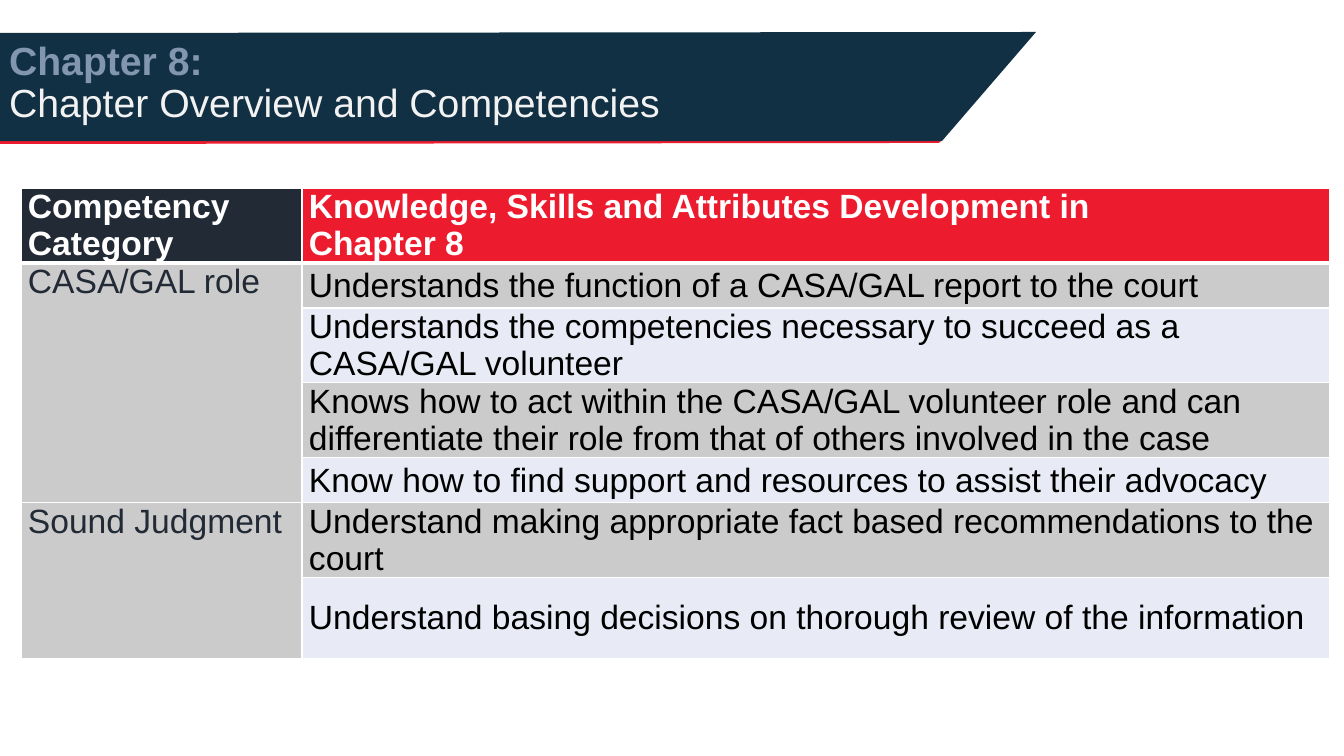
from pptx import Presentation
from pptx.dml.color import RGBColor
from pptx.enum.text import MSO_ANCHOR, PP_ALIGN
from pptx.oxml import parse_xml
from pptx.oxml.ns import nsdecls
from pptx.util import Emu, Pt

TOP, MIDDLE = MSO_ANCHOR.TOP, MSO_ANCHOR.MIDDLE
LEFT = PP_ALIGN.LEFT

COLORS = {
    "navy": "113044", "red": "ED1B2E", "slate": "8296B0", "pale": "F2F2F2",
    "ink": "222A35", "grey": "CBCBCB", "lilac": "E8EBF5",
    "white": "FFFFFF", "black": "000000",
}
TITLE_LINES = [("Chapter 8: ", "slate", True),
               ("Chapter Overview and Competencies", "pale", False)]
HEADERS = [("Competency Category", "ink"),
           ("Knowledge, Skills and Attributes Development in\nChapter 8", "red")]
COMPETENCIES = {
    "CASA/GAL role": [
        "Understands the function of a CASA/GAL report to the court",
        "Understands the competencies necessary to succeed as a CASA/GAL volunteer",
        "Knows how to act within the CASA/GAL volunteer role and can differentiate "
        "their role from that of others involved in the case",
        "Know how to find support and resources to assist their advocacy",
    ],
    "Sound Judgment": [
        "Understand making appropriate fact based recommendations to the court",
        "Understand basing decisions on thorough review of the information",
    ],
}
# Outlines and boxes in px
BANNER = [
    ("red", [(-1, 139), (943, 139), (939, 143), (-1, 144)]),
    ("navy", [(1036, 32), (0, 33), (-1, 141), (942, 141)]),
]
TITLE_BOX = {"left": -1, "top": 11, "width": 1159, "height": 146}
TABLE_BOX = (21, 188, 1309, 496)
COLUMN_WIDTHS = [281, 1028]
ROW_HEIGHTS = [36, 45, 40, 40, 45, 34, 81]
CELL_MARGINS = {"margin_left": 7, "margin_right": 7, "margin_top": 0, "margin_bottom": 0}
EMU_PER_PX = 914400 / 100.8


def px(length):
    return Emu(round(length * EMU_PER_PX))


def rgb(name):
    return RGBColor.from_string(COLORS[name])


def style_font(font, size, color, bold):
    for key, value in {"name": "Arial", "size": Pt(size), "bold": bold}.items():
        setattr(font, key, value)
    font.color.rgb = rgb(color)


def add_banner(slide):
    """Draw the banner strips behind the title."""
    tree = slide.shapes._spTree
    for layer, (color, points) in enumerate(BANNER):
        builder = slide.shapes.build_freeform(*points[0], scale=EMU_PER_PX)
        builder.add_line_segments(points[1:], close=True)
        strip = builder.convert_to_shape()
        strip.shadow.inherit = False
        strip.fill.solid()
        strip.fill.fore_color.rgb = rgb(color)
        strip.line.fill.background()
        tree.remove(strip._element)
        tree.insert(2 + layer, strip._element)


def fill_title(title):
    for side, length in TITLE_BOX.items():
        setattr(title, side, px(length))
    frame = title.text_frame
    frame.word_wrap = True
    frame.vertical_anchor = MIDDLE
    paragraph = frame.paragraphs[0]
    paragraph.alignment = LEFT
    paragraph.line_spacing = 0.9
    for index, (text, color, bold) in enumerate(TITLE_LINES):
        if index:
            paragraph.add_line_break()
        run = paragraph.add_run()
        run.text = text
        style_font(run.font, 28, color, bold)


def add_borders(cell, bottom_width):
    properties = cell._tc.get_or_add_tcPr()
    widths = {"lnL": 1, "lnR": 1, "lnT": 1, "lnB": bottom_width}
    for index, (side, width) in enumerate(widths.items()):
        properties.insert(index, parse_xml(
            f'<a:{side} {nsdecls("a")} w="{Pt(width)}"><a:solidFill>'
            f'<a:srgbClr val="{COLORS["white"]}"/></a:solidFill></a:{side}>'))


def fill_cell(cell, text, fill, color="black", bold=False, anchor=TOP, bottom_width=1):
    cell.text = text
    for side, length in CELL_MARGINS.items():
        setattr(cell, side, px(length))
    cell.vertical_anchor = anchor
    cell.fill.solid()
    cell.fill.fore_color.rgb = rgb(fill)
    for paragraph in cell.text_frame.paragraphs:
        for run in paragraph.runs:
            style_font(run.font, 24, color, bold)
    add_borders(cell, bottom_width)


def add_competency_table(slide):
    table = slide.shapes.add_table(
        len(ROW_HEIGHTS), len(COLUMN_WIDTHS), *map(px, TABLE_BOX)).table
    for column, width in zip(table.columns, COLUMN_WIDTHS):
        column.width = px(width)
    for table_row, height in zip(table.rows, ROW_HEIGHTS):
        table_row.height = px(height)
    for column, (heading, fill) in enumerate(HEADERS):
        fill_cell(table.cell(0, column), heading, fill, "white", True, bottom_width=3)
    row = 1
    for category, skills in COMPETENCIES.items():
        first = row
        for skill in skills:
            fill_cell(table.cell(row, 0), category if row == first else "", "grey", "ink")
            fill_cell(table.cell(row, 1), skill, "grey" if row % 2 else "lilac", anchor=MIDDLE)
            row += 1
        table.cell(first, 0).merge(table.cell(row - 1, 0))


def main():
    deck = Presentation()
    deck.slide_width, deck.slide_height = px(1344), px(756)
    slide = deck.slides.add_slide(deck.slide_layouts[5])
    add_banner(slide)
    fill_title(slide.shapes.title)
    add_competency_table(slide)
    deck.save("out.pptx")


if __name__ == "__main__":
    main()
